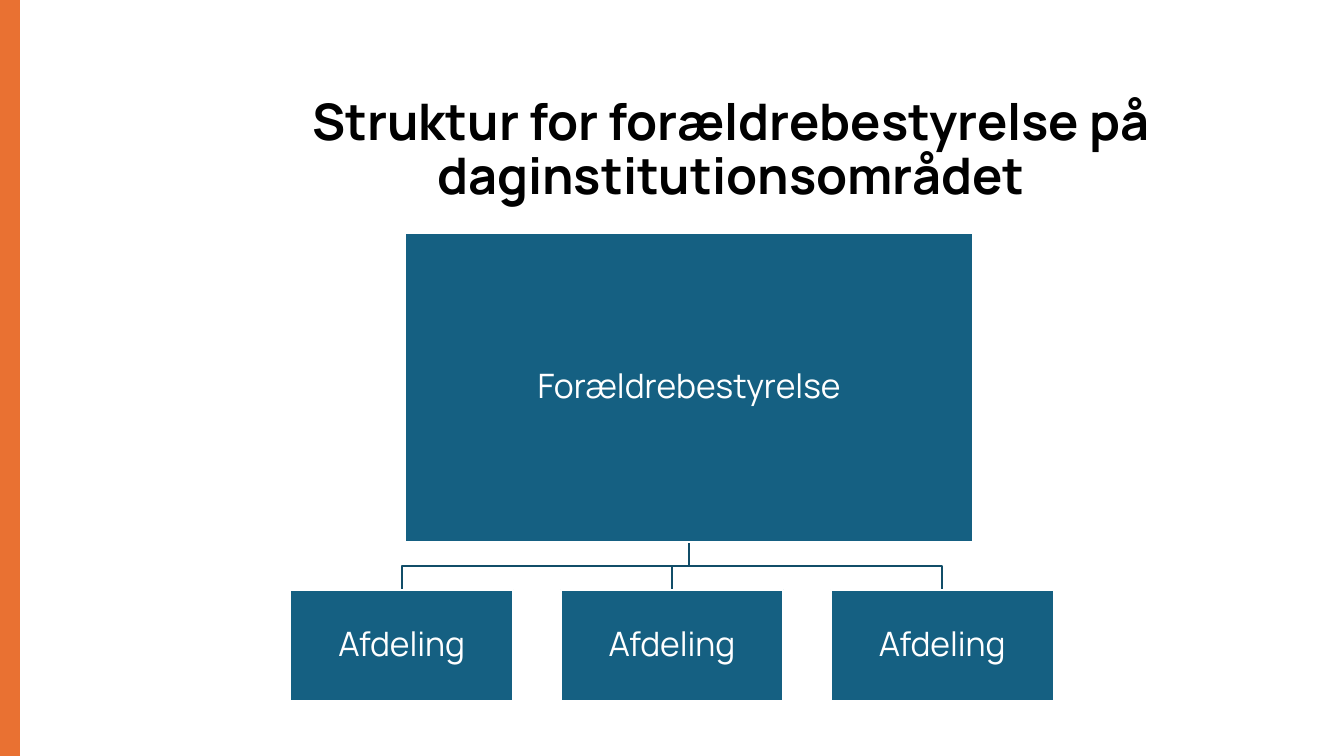
"""Build the slide on the parent board structure of day-care institutions."""
from dataclasses import dataclass

from pptx import Presentation
from pptx.dml.color import RGBColor
from pptx.enum.shapes import MSO_SHAPE
from pptx.enum.text import MSO_ANCHOR, MSO_AUTO_SIZE, PP_ALIGN
from pptx.util import Inches, Pt

RECTANGLE = MSO_SHAPE.RECTANGLE
CENTER = PP_ALIGN.CENTER
MIDDLE, BOTTOM = MSO_ANCHOR.MIDDLE, MSO_ANCHOR.BOTTOM
NO_AUTOFIT = MSO_AUTO_SIZE.NONE


@dataclass(frozen=True)
class Theme:
    font: str = "Manrope"
    accent: RGBColor = RGBColor(0xE9, 0x71, 0x32)
    box: RGBColor = RGBColor(0x15, 0x60, 0x82)
    branch: RGBColor = RGBColor(0x11, 0x4D, 0x68)
    white: RGBColor = RGBColor(0xFF, 0xFF, 0xFF)
    black: RGBColor = RGBColor(0, 0, 0)
    title_size: Pt = Pt(36)
    box_size: Pt = Pt(24)
    line_width: Pt = Pt(1.5)


THEME = Theme()


def write_centered(frame, text, size, color, anchor, bold=False):
    frame.word_wrap = True
    frame.auto_size = NO_AUTOFIT
    frame.vertical_anchor = anchor
    paragraph = frame.paragraphs[0]
    paragraph.alignment = CENTER
    paragraph.line_spacing = 0.9
    run = paragraph.add_run()
    run.text = text
    run.font.name = THEME.font
    run.font.size = size
    run.font.bold = bold
    run.font.color.rgb = color


def add_unit(shapes, text, left, top, width, height):
    unit = shapes.add_shape(RECTANGLE, Inches(left), Inches(top), Inches(width), Inches(height))
    unit.shadow.inherit = False
    unit.fill.solid()
    unit.fill.fore_color.rgb = THEME.box
    unit.line.color.rgb = THEME.white
    unit.line.width = THEME.line_width
    frame = unit.text_frame
    frame.margin_left = frame.margin_right = Inches(0.02)
    frame.margin_top = frame.margin_bottom = Inches(0.02)
    write_centered(frame, text, THEME.box_size, THEME.white, MIDDLE)


deck = Presentation()
deck.slide_width, deck.slide_height = Inches(13.33), Inches(7.5)
slide = deck.slides.add_slide(deck.slide_layouts[5])
shapes = slide.shapes
slide.background.fill.solid()
slide.background.fill.fore_color.rgb = THEME.accent

title = shapes.title
title.left, title.top = Inches(2.33), Inches(1.65)
title.width, title.height = Inches(9.84), Inches(0.44)
write_centered(title.text_frame, "Struktur for forældrebestyrelse på daginstitutionsområdet",
               THEME.title_size, THEME.black, BOTTOM, bold=True)

page = shapes.add_shape(RECTANGLE, Inches(0.2), 0, Inches(13.13), Inches(7.5))
page.shadow.inherit = False
page.fill.solid()
page.fill.fore_color.rgb = THEME.white
page.line.fill.background()
title.element.addprevious(page.element)

board_left, board_top, board_width, board_height = 4.02, 2.31, 5.63, 3.07
department_left, department_top, department_width, department_height = 2.88, 5.85, 2.21, 1.11
department_step = 2.68
department_lefts = [department_left + i * department_step for i in range(3)]

board_center = Inches(board_left + board_width / 2)
board_bottom = Inches(board_top + board_height)
branch_bottom = Inches(department_top)
branch_middle = (board_bottom + branch_bottom) // 2

for left in department_lefts:
    department_center = Inches(left + department_width / 2)
    outline = shapes.build_freeform(board_center, board_bottom)
    outline.add_line_segments([
        (board_center, branch_middle),
        (department_center, branch_middle),
        (department_center, branch_bottom),
    ], close=False)
    branch = outline.convert_to_shape()
    branch.shadow.inherit = False
    branch.fill.background()
    branch.line.color.rgb = THEME.branch
    branch.line.width = THEME.line_width

add_unit(shapes, "Forældrebestyrelse", board_left, board_top, board_width, board_height)
for left in department_lefts:
    add_unit(shapes, "Afdeling", left, department_top, department_width, department_height)

deck.save("out.pptx")
